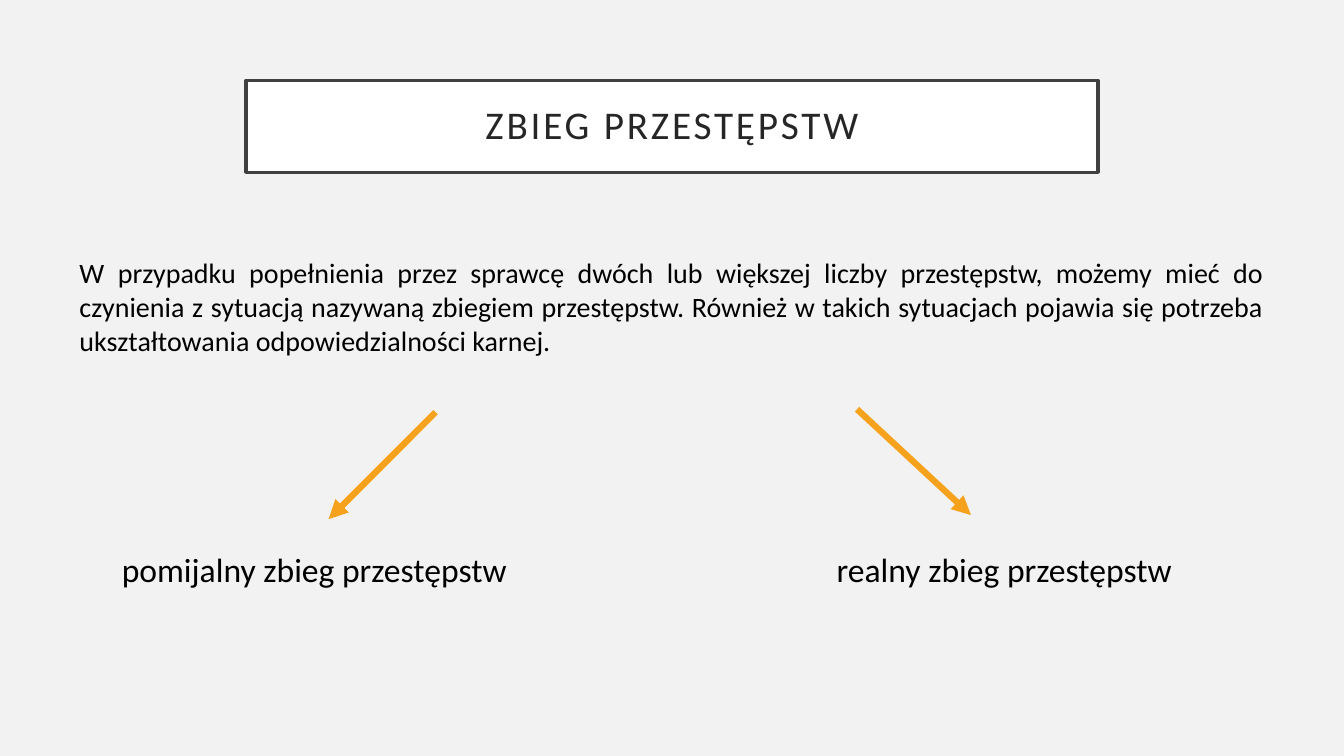
import pptx
import pptx.dml.color
import pptx.enum.shapes
import pptx.enum.text
import pptx.oxml.ns
import pptx.util
from lxml import etree
from pptx.util import Inches

RGBColor = pptx.dml.color.RGBColor
Align = pptx.enum.text.PP_ALIGN

BACKGROUND = RGBColor(0xF2, 0xF2, 0xF2)
WHITE = RGBColor(0xFF, 0xFF, 0xFF)
BLACK = RGBColor(0x00, 0x00, 0x00)
FRAME = RGBColor(0x40, 0x40, 0x40)
TITLE_TEXT = RGBColor(0x26, 0x26, 0x26)
ORANGE = RGBColor(0xF6, 0xA2, 0x1D)

INTRO = (
    "W przypadku popełnienia przez sprawcę dwóch lub większej liczby przestępstw, "
    "możemy mieć do czynienia z sytuacją nazywaną zbiegiem przestępstw. Również w "
    "takich sytuacjach pojawia się potrzeba ukształtowania odpowiedzialności karnej."
)
# label, left, width, arrow start, arrow end
BRANCHES = [
    ("pomijalny zbieg przestępstw", 1.11, 4.02, (4.32, 4.09), (3.26, 5.15)),
    ("realny zbieg przestępstw", 8.2, 3.55, (8.5, 4.06), (9.63, 5.11)),
]


class SlideBuilder:
    font_name = "Calibri"

    def __init__(self, page):
        self.page = page
        fill = page.background.fill
        fill.solid()
        fill.fore_color.rgb = BACKGROUND

    def style(self, para, size, color, align):
        para.alignment = align
        para.font.name = self.font_name
        para.font.size = pptx.util.Pt(size)
        para.font.color.rgb = color

    def title(self, text, left, top, width, height):
        box = self.page.shapes.title
        box.left, box.top = Inches(left), Inches(top)
        box.width, box.height = Inches(width), Inches(height)
        box.fill.solid()
        box.fill.fore_color.rgb = WHITE
        box.line.color.rgb = FRAME
        box.line.width = pptx.util.Pt(2.5)
        frame = box.text_frame
        frame.vertical_anchor = pptx.enum.text.MSO_ANCHOR.MIDDLE
        frame.margin_left = frame.margin_right = Inches(0.2)
        frame.margin_top = frame.margin_bottom = Inches(0.2)
        para = frame.paragraphs[0]
        span = para.add_run()
        span.text = text
        span.font._element.set("spc", "200")
        para.line_spacing = 0.9
        self.style(para, 28, TITLE_TEXT, Align.CENTER)

    def text(self, text, left, top, width, height, size, align=Align.LEFT, wrap=False):
        box = self.page.shapes.add_textbox(
            Inches(left), Inches(top), Inches(width), Inches(height))
        frame = box.text_frame
        frame.word_wrap = wrap
        frame.auto_size = pptx.enum.text.MSO_AUTO_SIZE.SHAPE_TO_FIT_TEXT
        para = frame.paragraphs[0]
        para.text = text
        self.style(para, size, BLACK, align)

    def arrow(self, start, end):
        points = [Inches(value) for value in (*start, *end)]
        arrow = self.page.shapes.add_connector(
            pptx.enum.shapes.MSO_CONNECTOR.STRAIGHT, *points)
        arrow.line.color.rgb = ORANGE
        arrow.line.width = pptx.util.Pt(4.5)
        qn = pptx.oxml.ns.qn
        properties = arrow._element.spPr
        etree.SubElement(properties.find(qn("a:ln")), qn("a:tailEnd"), type="triangle")
        etree.SubElement(properties, qn("a:effectLst"))


def main():
    deck = pptx.Presentation()
    deck.slide_width, deck.slide_height = Inches(13.33), Inches(7.5)
    builder = SlideBuilder(deck.slides.add_slide(deck.slide_layouts[5]))
    builder.title("ZBIEG PRZESTĘPSTW", 2.44, 0.8, 8.45, 0.91)
    builder.text(INTRO, 0.69, 2.49, 11.94, 1.11, 20, Align.JUSTIFY, wrap=True)
    for label, left, width, start, end in BRANCHES:
        builder.arrow(start, end)
        builder.text(label, left, 5.4, width, 0.5, 24)
    deck.save("out.pptx")


if __name__ == "__main__":
    main()
